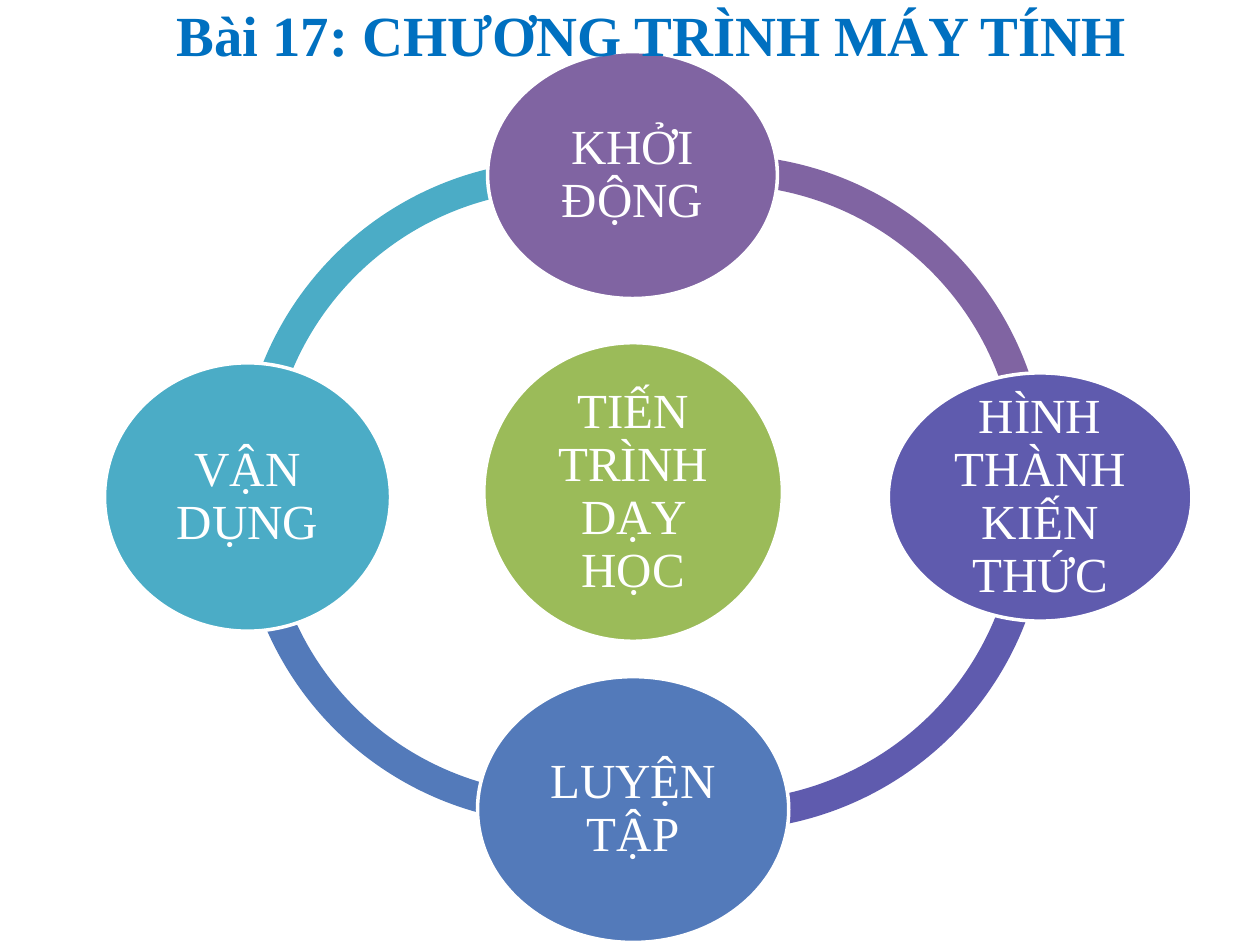
from pptx import Presentation
from pptx.dml.color import RGBColor
from pptx.enum import shapes, text
from pptx.util import Inches, Pt

WHITE = RGBColor(0xFF, 0xFF, 0xFF)
BLUE = RGBColor(0x00, 0x70, 0xC0)
TEAL = RGBColor(0x4B, 0xAC, 0xC6)
STEEL = RGBColor(0x53, 0x7A, 0xBA)
INDIGO = RGBColor(0x5F, 0x5B, 0xAE)
PURPLE = RGBColor(0x80, 0x64, 0xA2)
GREEN = RGBColor(0x9B, 0xBB, 0x59)
FONT = "Times New Roman"
ARC_SIZE = 5.15
ARC_THICKNESS = 0.046

deck = Presentation()
deck.slide_width, deck.slide_height = Inches(10), Inches(7.5)
page = deck.slides.add_slide(deck.slide_layouts[6])


def add_filled(kind, left, top, width, height, color):
    shape = page.shapes.add_shape(
        kind, Inches(left), Inches(top), Inches(width), Inches(height))
    shape.shadow.inherit = False
    shape.fill.solid()
    shape.fill.fore_color.rgb = color
    return shape


def write(frame, words, size, color):
    frame.margin_top = frame.margin_bottom = Inches(0.04)
    frame.margin_left = frame.margin_right = Inches(0.04)
    para = frame.paragraphs[0]
    para.text = words
    para.alignment = text.PP_ALIGN.CENTER
    para.font.name = FONT
    para.font.size = Pt(size)
    para.font.color.rgb = color
    return para


# Ring of arcs: left, top, start and end angle, colour
arcs = [
    (1.9, 1.27, 106.61, 169.57, TEAL),
    (1.9, 1.39, 46.46, 108.26, STEEL),
    (3.16, 1.44, 215.1, 63.86, INDIGO),
    (3.16, 1.23, 152.1, 1.92, PURPLE),
]
for left, top, start, end, color in arcs:
    arc = add_filled(shapes.MSO_SHAPE.BLOCK_ARC, left, top, ARC_SIZE, ARC_SIZE, color)
    arc.line.fill.background()
    for index, value in enumerate((start, end, ARC_THICKNESS)):
        arc.adjustments[index] = value

# Centre topic and the four lesson stages
stages = [
    ("TIẾN TRÌNH DẠY HỌC", 3.84, 2.72, 2.37, 2.37, GREEN),
    ("KHỞI ĐỘNG", 3.87, 0.41, 2.3, 1.96, PURPLE),
    ("HÌNH THÀNH KIẾN THỨC", 7.05, 2.96, 2.41, 1.97, INDIGO),
    ("LUYỆN TẬP", 3.79, 5.37, 2.47, 2.11, STEEL),
    ("VẬN DỤNG", 0.83, 2.88, 2.27, 2.13, TEAL),
]
for words, left, top, width, height, color in stages:
    circle = add_filled(shapes.MSO_SHAPE.OVAL, left, top, width, height, color)
    circle.line.color.rgb = WHITE
    circle.line.width = Pt(2)
    frame = circle.text_frame
    frame.word_wrap = True
    frame.vertical_anchor = text.MSO_ANCHOR.MIDDLE
    para = write(frame, words, 28, WHITE)
    para.line_spacing = 0.9

# Title
title = page.shapes.add_textbox(Inches(0.67), Inches(0), Inches(9), Inches(0.42))
title.text_frame.word_wrap = True
para = write(title.text_frame, "Bài 17: CHƯƠNG TRÌNH MÁY TÍNH", 32.4, BLUE)
para.font.bold = True
title.text_frame.margin_top = title.text_frame.margin_bottom = Inches(0)

deck.save("out.pptx")
